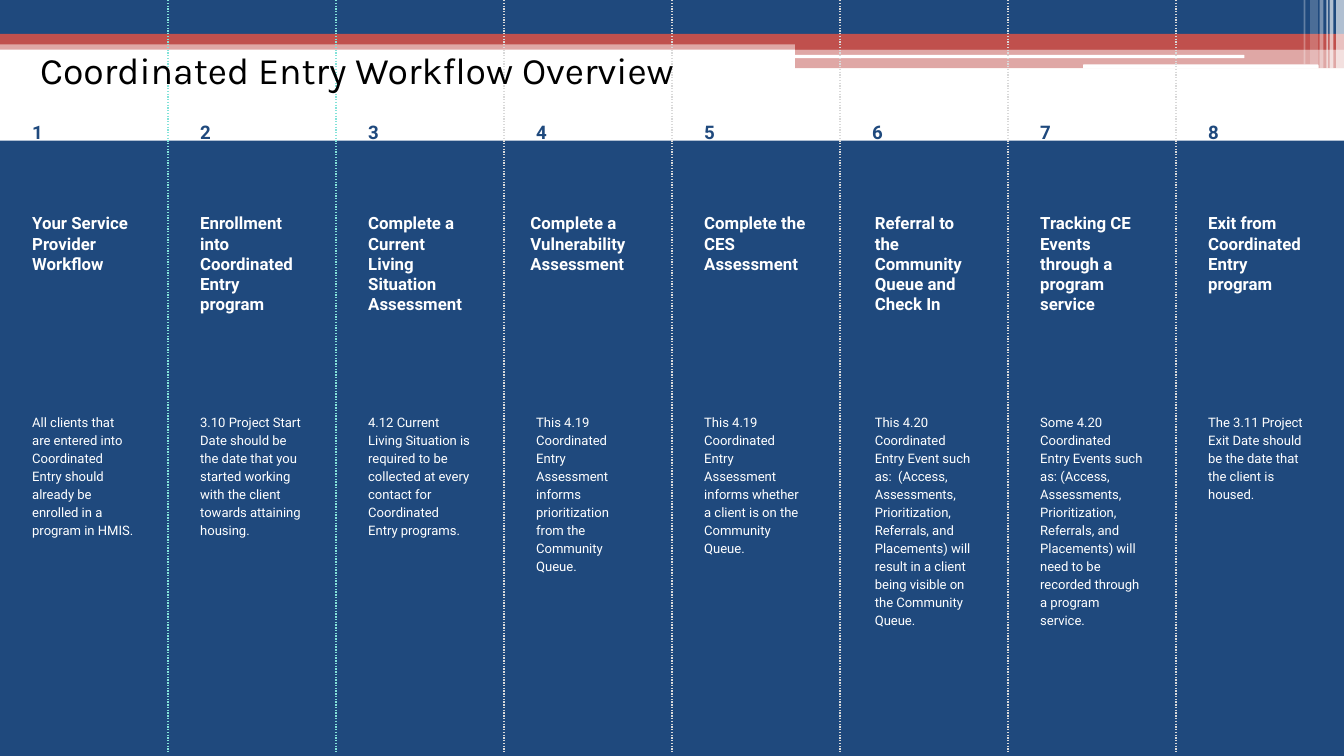
from lxml import etree
from pptx import Presentation
from pptx.dml.color import RGBColor
from pptx.enum.dml import MSO_LINE
from pptx.enum.shapes import MSO_CONNECTOR, MSO_SHAPE
from pptx.enum.text import MSO_ANCHOR
from pptx.oxml.ns import qn
from pptx.util import Cm, Pt

RECT = MSO_SHAPE.RECTANGLE
ROUNDED = MSO_SHAPE.ROUNDED_RECTANGLE
STRAIGHT = MSO_CONNECTOR.STRAIGHT
DOTTED = MSO_LINE.ROUND_DOT
TOP = MSO_ANCHOR.TOP

NAVY = RGBColor(0x1F, 0x49, 0x7D)
RED = RGBColor(0xC0, 0x50, 0x4D)
WHITE = RGBColor(0xFF, 0xFF, 0xFF)
BLACK = RGBColor(0x00, 0x00, 0x00)
TEAL = RGBColor(0x83, 0xE3, 0xD9)
GRAY = RGBColor(0xD9, 0xD9, 0xD9)

# All lengths are in centimetres
WIDTH, HEIGHT = 25.4, 14.29
PANEL_TOP = 2.66
TEXT_INSET, TEXT_WIDTH = 0.36, 2.44

# Heading, description, heading shift, description shift
STEPS = [
    ("Your Service Provider Workflow",
     "All clients that are entered into Coordinated Entry should already be "
     "enrolled in a program in HMIS.", 0, 0),
    ("Enrollment into Coordinated Entry program",
     "3.10 Project Start Date should be the date that you started working "
     "with the client towards attaining housing.", 0, 0),
    ("Complete a Current Living Situation Assessment",
     "4.12 Current Living Situation is required to be collected at every "
     "contact for Coordinated Entry programs.", 0, 0),
    ("Complete a Vulnerability Assessment",
     "This 4.19 Coordinated Entry Assessment informs prioritization from "
     "the Community Queue.", -0.11, 0),
    ("Complete the CES Assessment",
     "This 4.19 Coordinated Entry Assessment informs whether a client is "
     "on the Community Queue.", 0, 0),
    ("Referral to the Community Queue and Check In",
     "This 4.20 Coordinated Entry Event such as:  (Access, Assessments, "
     "Prioritization, Referrals, and Placements) will result in a client "
     "being visible on the Community Queue.", 0.05, 0.05),
    ("Tracking CE Events through a program service",
     "Some 4.20 Coordinated Entry Events such as: (Access, Assessments, "
     "Prioritization, Referrals, and Placements) will need to be recorded "
     "through a program service.", 0, 0),
    ("Exit from Coordinated Entry program",
     "The 3.11 Project Exit Date should be the date that the client is "
     "housed.", 0, 0),
]
COLUMN = WIDTH / len(STEPS)

# Left, top, width, height, opacity in percent
RED_BANDS = [
    (0, 0.76, WIDTH, 0.18, 50),
    (0, 0.64, WIDTH, 0.2, 100),
    (15.03, 0.76, 10.37, 0.18, 100),
    (15.03, 0.92, 10.37, 0.37, 50),
]
# Left, top, width, height
WHITE_BARS = [(15.01, 1.04, 8.51, 0.06), (20.47, 1.22, 4.45, 0.08)]
# Left, width, height, opacity in percent
STRIPES = [
    (25.25, 0.15, 1.3, 65),
    (25.13, 0.07, 1.3, 65),
    (25.07, 0.03, 1.3, 60),
    (24.94, 0.07, 1.3, 40),
    (24.76, 0.15, 1.22, 20),
    (24.64, 0.03, 1.22, 30),
]


class SlideBuilder:
    margin = Cm(0.25)

    def __init__(self, slide):
        self.shapes = slide.shapes

    def block(self, left, top, width, height, color, opacity=100, kind=RECT):
        shape = self.shapes.add_shape(kind, Cm(left), Cm(top), Cm(width), Cm(height))
        shape.shadow.inherit = False
        shape.line.fill.background()
        shape.fill.solid()
        shape.fill.fore_color.rgb = color
        if opacity < 100:
            rgb = shape.fill._xPr.find(".//" + qn("a:srgbClr"))
            etree.SubElement(rgb, qn("a:alpha"), val=str(opacity * 1000))

    def divider(self, x, color):
        line = self.shapes.add_connector(STRAIGHT, Cm(x), Cm(0), Cm(x), Cm(14.22))
        line.line.color.rgb = color
        line.line.width = Pt(0.75)
        line.line.dash_style = DOTTED
        etree.SubElement(line._element.spPr, qn("a:effectLst"))

    def text(self, content, left, top, width, height, size, color=WHITE,
             font="Roboto", bold=False, spacing=None, after=None):
        box = self.shapes.add_textbox(Cm(left), Cm(top), Cm(width), Cm(height))
        frame = box.text_frame
        frame.word_wrap = True
        frame.vertical_anchor = TOP
        frame.margin_left = frame.margin_right = self.margin
        frame.margin_top = frame.margin_bottom = self.margin
        paragraph = frame.paragraphs[0]
        paragraph.text = content
        paragraph.line_spacing = spacing
        paragraph.space_after = after
        paragraph.font.name = font
        paragraph.font.size = Pt(size)
        paragraph.font.bold = bold
        paragraph.font.color.rgb = color


def main():
    deck = Presentation()
    deck.slide_width, deck.slide_height = Cm(WIDTH), Cm(HEIGHT)
    builder = SlideBuilder(deck.slides.add_slide(deck.slide_layouts[6]))

    # Header decoration
    builder.block(0, 0, WIDTH, 0.64, NAVY)
    for *place, opacity in RED_BANDS:
        builder.block(*place, RED, opacity)
    for bar in WHITE_BARS:
        builder.block(*bar, WHITE, kind=ROUNDED)
    for left, width, height, opacity in STRIPES:
        builder.block(left, 0, width, height, WHITE, opacity)

    # Column panels and the dividers between them
    for column in range(len(STEPS)):
        builder.block(column * COLUMN, PANEL_TOP, COLUMN, HEIGHT - PANEL_TOP, NAVY)
    for column in range(1, len(STEPS)):
        builder.divider(column * COLUMN, TEAL if column <= 2 else GRAY)

    # Step number, heading and description
    for column, (heading, description, head_shift, body_shift) in enumerate(STEPS):
        left = column * COLUMN + TEXT_INSET
        builder.text(str(column + 1), left, 1.98, 2, 0.64, 10, NAVY,
                     bold=True, spacing=1.15, after=Pt(16))
        builder.text(heading, left + head_shift, 3.78,
                     TEXT_WIDTH + 2 * abs(min(head_shift, 0)), 3.4, 9, bold=True)
        builder.text(description, left + body_shift, 7.54, TEXT_WIDTH, 5.49, 7,
                     spacing=1.15, after=Pt(16))

    # Title
    builder.text("Coordinated Entry Workflow Overview", 0.51, 0.64, 14.58, 0.97,
                 20, BLACK, font="Karla")

    deck.save("out.pptx")


if __name__ == "__main__":
    main()
